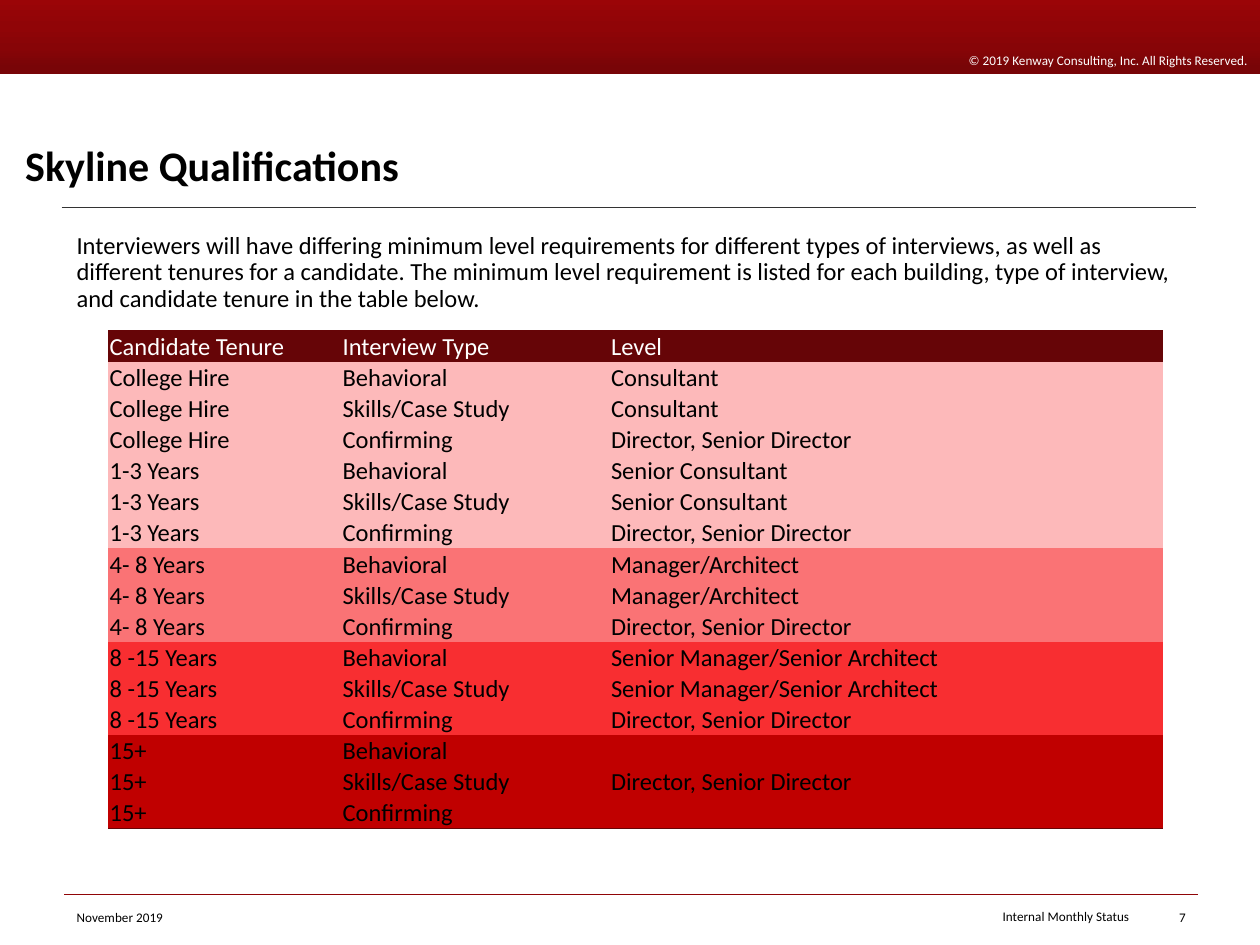
from dataclasses import dataclass, field

from lxml.etree import SubElement
from pptx import Presentation
from pptx.dml.color import RGBColor
from pptx.enum.shapes import MSO_CONNECTOR, MSO_SHAPE
from pptx.enum.text import MSO_ANCHOR, PP_ALIGN
from pptx.oxml import parse_xml
from pptx.oxml.ns import nsdecls, qn
from pptx.util import Pt

BLACK, WHITE, RED, DARK_RED = "000000", "FFFFFF", "900507", "660507"
FONT = "Calibri"
NO_TABLE_STYLE = "{2D5ABB26-0587-4C30-8999-92F81FD0307C}"
BANNER_STOPS = [(0, "9B0507"), (35, "900507"), (65, "870507"), (91, "780507")]

HEADERS = ("Candidate Tenure", "Interview Type", "Level")
INTERVIEW_TYPES = ("Behavioral", "Skills/Case Study", "Confirming")
DIRECTOR = "Director, Senior Director"
COLUMN_WIDTHS = (133.2, 153.36, 316.08)
ROW_HEIGHT = 17.8


@dataclass
class Label:
    text: str
    left: float
    top: float
    width: float
    height: float
    size: float = 7.5
    anchor: MSO_ANCHOR = MSO_ANCHOR.MIDDLE
    format: dict = field(default_factory=dict)


@dataclass
class Rule:
    left: float
    right: float
    y: float
    color: str


@dataclass
class Tenure:
    name: str
    fill: str
    levels: tuple
    anchor: MSO_ANCHOR = MSO_ANCHOR.MIDDLE


RIGHT = {"alignment": PP_ALIGN.RIGHT}
TIGHT = {"line_spacing": 0.9}
TITLE = Label("Skyline Qualifications", 7.2, 55.44, 648, 56.88, 24,
              MSO_ANCHOR.BOTTOM, TIGHT | {"alignment": PP_ALIGN.LEFT})
LABELS = [
    Label("Internal Monthly Status", 469.44, 514.08, 182.88, 20.16, format=RIGHT | TIGHT),
    Label("November 2019", 36.72, 514.8, 97.92, 20.16, format=TIGHT),
    Label("7", 655.2, 514.08, 29.52, 20.16, format=RIGHT),
    Label("Interviewers will have differing minimum level requirements for different types "
          "of interviews, as well as different tenures for a candidate. The minimum level "
          "requirement is listed for each building, type of interview, and candidate tenure "
          "in the table below.", 36.72, 129.6, 648, 342.72, 14, MSO_ANCHOR.TOP, TIGHT),
]
RULES = [Rule(36.72, 684.72, 511.2, RED), Rule(35.28, 683.28, 118.8, "333333")]
TENURES = [
    Tenure("College Hire", "FDB9BA", ("Consultant", "Consultant", DIRECTOR), MSO_ANCHOR.TOP),
    Tenure("1-3 Years", "FDB9BA", ("Senior Consultant", "Senior Consultant", DIRECTOR)),
    Tenure("4- 8 Years", "FA7375", ("Manager/Architect", "Manager/Architect", DIRECTOR)),
    Tenure("8 -15 Years", "F82E31", ("Senior Manager/Senior Architect",
                                     "Senior Manager/Senior Architect", DIRECTOR)),
    Tenure("15+", "C00000", (DIRECTOR, "", "")),
]


def rgb(color: str) -> RGBColor:
    return RGBColor.from_string(color)


def set_all(target, values: dict) -> None:
    for name, value in values.items():
        setattr(target, name, value)


def write(frame, text: str, size: float, color: str = BLACK, bold: bool = False,
          para_format: dict | None = None) -> None:
    para = frame.paragraphs[0]
    set_all(para, para_format or {})
    span = para.add_run()
    span.text = text
    set_all(span.font, {"name": FONT, "size": Pt(size), "bold": bold})
    span.font.color.rgb = rgb(color)


def fill_label(box, label: Label, bold: bool = False) -> None:
    """Place the box and give it the label's text."""
    set_all(box, {side: Pt(getattr(label, side)) for side in ("left", "top", "width", "height")})
    set_all(box.text_frame, {"word_wrap": True, "vertical_anchor": label.anchor})
    write(box.text_frame, label.text, label.size, bold=bold, para_format=label.format)


def draw_banner(page) -> None:
    banner = page.shapes.add_shape(MSO_SHAPE.RECTANGLE, 0, 0, Pt(720), Pt(42.48))
    banner.shadow.inherit = False
    banner.line.fill.background()
    banner.fill.gradient()
    banner.fill.gradient_angle = 270
    stop_list = banner._element.spPr.find(".//" + qn("a:gsLst"))
    for stop in list(stop_list):
        stop_list.remove(stop)
    for percent, color in BANNER_STOPS:
        stop = SubElement(stop_list, qn("a:gs"), pos=str(percent * 1000))
        SubElement(stop, qn("a:srgbClr"), val=color)
    banner.text_frame.word_wrap = True
    banner.text_frame.vertical_anchor = MSO_ANCHOR.BOTTOM
    write(banner.text_frame, "© 2019 Kenway Consulting, Inc. All Rights Reserved.",
          7.5, WHITE, para_format=RIGHT)


def draw_rule(page, rule: Rule) -> None:
    line = page.shapes.add_connector(MSO_CONNECTOR.STRAIGHT, Pt(rule.left), Pt(rule.y),
                                     Pt(rule.right), Pt(rule.y))
    line.line.color.rgb = rgb(rule.color)
    line.line.width = Pt(0.5)
    SubElement(line._element.spPr, qn("a:effectLst"))


def fill_cell(cell, text: str, fill: str, color: str, anchor: MSO_ANCHOR,
              border: str | None = None) -> None:
    """Format one cell; border is the tag of an edge to draw, such as lnT."""
    set_all(cell, {"margin_left": Pt(0.72), "margin_right": Pt(0.72), "margin_top": Pt(0.72),
                   "margin_bottom": 0, "vertical_anchor": anchor})
    if border:
        cell._tc.get_or_add_tcPr().append(parse_xml(
            f'<a:{border} {nsdecls("a")} w="12700"><a:solidFill>'
            f'<a:srgbClr val="{DARK_RED}"/></a:solidFill></a:{border}>'))
    cell.fill.solid()
    cell.fill.fore_color.rgb = rgb(fill)
    if text:
        write(cell.text_frame, text, 14, color)


def draw_table(page) -> None:
    per_tenure = len(INTERVIEW_TYPES)
    row_count = 1 + len(TENURES) * per_tenure
    table = page.shapes.add_table(row_count, len(HEADERS), Pt(61.92), Pt(189), Pt(602.64),
                                  Pt(ROW_HEIGHT * row_count)).table
    table.horz_banding = False
    table._tbl.tblPr.find(qn("a:tableStyleId")).text = NO_TABLE_STYLE
    for column, width in zip(table.columns, COLUMN_WIDTHS):
        column.width = Pt(width)
    for row in table.rows:
        row.height = Pt(ROW_HEIGHT)

    last_row, level_column = row_count - 1, len(HEADERS) - 1
    merge_row = row_count - per_tenure
    table.cell(merge_row, level_column).merge(table.cell(last_row, level_column))
    for column, header in enumerate(HEADERS):
        fill_cell(table.cell(0, column), header, DARK_RED, WHITE, MSO_ANCHOR.MIDDLE, "lnT")
    for group, tenure in enumerate(TENURES):
        for step, (kind, level) in enumerate(zip(INTERVIEW_TYPES, tenure.levels)):
            row = 1 + group * per_tenure + step
            for column, text in enumerate((tenure.name, kind, level)):
                at_bottom = row == last_row or (row, column) == (merge_row, level_column)
                fill_cell(table.cell(row, column), text, tenure.fill, BLACK, tenure.anchor,
                          "lnB" if at_bottom else None)


def main() -> None:
    deck = Presentation()
    deck.slide_width, deck.slide_height = Pt(720), Pt(540)
    page = deck.slides.add_slide(deck.slide_layouts[5])
    draw_banner(page)
    for rule in RULES:
        draw_rule(page, rule)
    for label in LABELS:
        fill_label(page.shapes.add_textbox(0, 0, 0, 0), label)
    fill_label(page.shapes.title, TITLE, bold=True)
    draw_table(page)
    deck.save("out.pptx")


if __name__ == "__main__":
    main()
